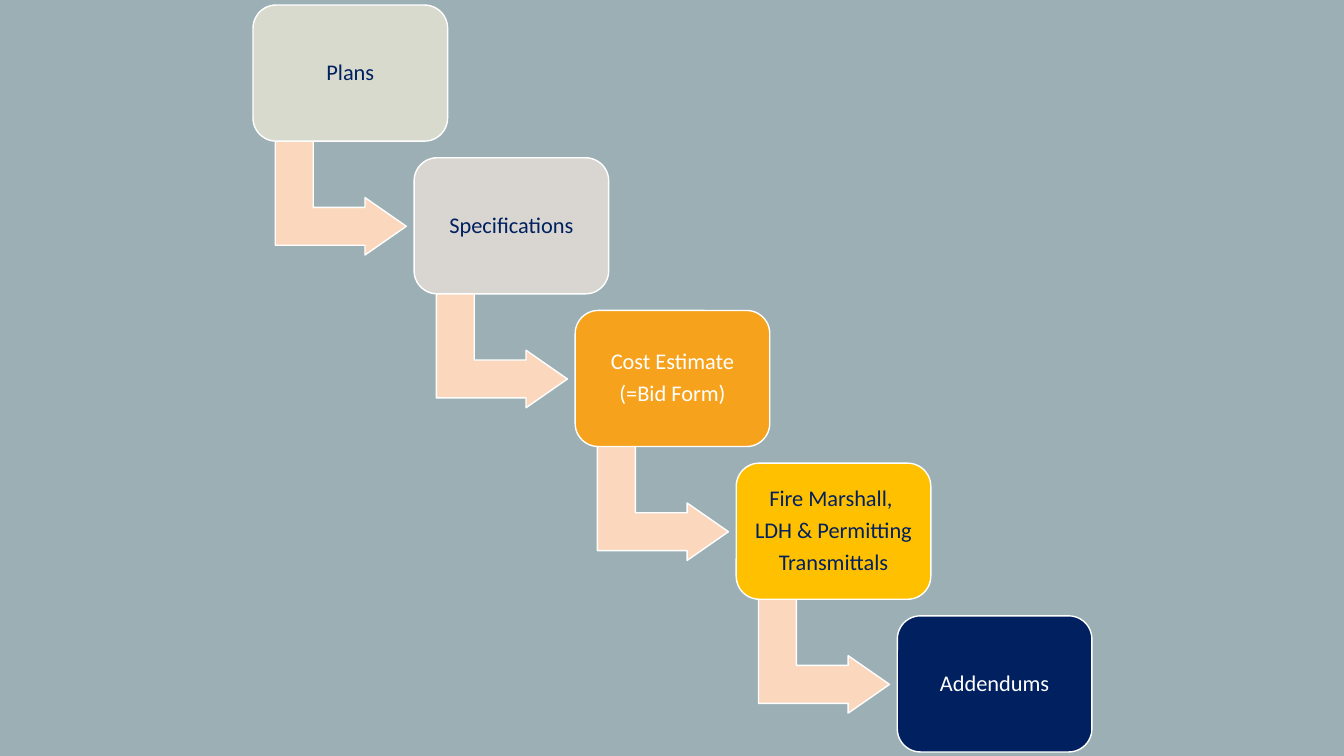
"""Build a staircase of project documents, each step leading to the next by a bent arrow."""
from pptx import Presentation
from pptx.dml.color import RGBColor
from pptx.enum.shapes import MSO_SHAPE
from pptx.enum.text import MSO_ANCHOR, PP_ALIGN
from pptx.util import Inches, Pt

ROUNDED_BOX = MSO_SHAPE.ROUNDED_RECTANGLE
BENT_ARROW = MSO_SHAPE.BENT_UP_ARROW
MIDDLE = MSO_ANCHOR.MIDDLE
CENTER = PP_ALIGN.CENTER

THEME = {
    "background": "9BAFB5",
    "arrow": "FBD7BD",
    "outline": "FFFFFF",
    "sage": "D7DACD",
    "stone": "D9D6D1",
    "orange": "F6A21D",
    "gold": "FFC000",
    "navy": "002060",
    "white": "FFFFFF",
    "font": "Calibri",
    "text_size": 16,
    "space_after": 5.6,
    "line_spacing": 0.9,
    "outline_width": 1,
}

STEPS = [
    (["Plans"], "sage", "navy"),
    (["Specifications"], "stone", "navy"),
    (["Cost Estimate", "(=Bid Form)"], "orange", "white"),
    (["Fire Marshall, ", "LDH & Permitting", "Transmittals"], "gold", "navy"),
    (["Addendums"], "navy", "white"),
]

FIRST_LEFT, FIRST_TOP = 2.51, 0.05
LAST_LEFT, LAST_TOP = 8.9, 6.11
BOX_WIDTH, BOX_HEIGHT = 1.93, 1.35
ARROW_WIDTH, ARROW_HEIGHT = 1.14, 1.3
ARROW_OFFSET_LEFT, ARROW_OFFSET_TOP = 0.3, 1.26
ARROW_ADJUSTMENTS = [0.33, 0.25, 0.36]
INSET = 0.07


def add_step_shape(slide, preset, left, top, width, height, fill, adjustments):
    shape = slide.shapes.add_shape(
        preset, Inches(left), Inches(top), Inches(width), Inches(height)
    )
    shape.shadow.inherit = False
    shape.fill.solid()
    shape.fill.fore_color.rgb = RGBColor.from_string(THEME[fill])
    shape.line.color.rgb = RGBColor.from_string(THEME["outline"])
    shape.line.width = Pt(THEME["outline_width"])
    for index, value in enumerate(adjustments):
        shape.adjustments[index] = value
    return shape


def write_text(shape, lines, color, size=THEME["text_size"], align=CENTER, anchor=MIDDLE):
    frame = shape.text_frame
    frame.word_wrap = True
    frame.vertical_anchor = anchor
    frame.margin_left = frame.margin_right = Inches(INSET)
    frame.margin_top = frame.margin_bottom = Inches(INSET)
    for index, line in enumerate(lines):
        paragraph = frame.add_paragraph() if index else frame.paragraphs[0]
        paragraph.alignment = align
        paragraph.line_spacing = THEME["line_spacing"]
        paragraph.space_after = Pt(THEME["space_after"])
        run = paragraph.add_run()
        run.text = line
        run.font.name = THEME["font"]
        run.font.size = Pt(size)
        run.font.color.rgb = RGBColor.from_string(THEME[color])


presentation = Presentation()
presentation.slide_width = Inches(13.33)
presentation.slide_height = Inches(7.5)
slide = presentation.slides.add_slide(presentation.slide_layouts[6])
slide.background.fill.solid()
slide.background.fill.fore_color.rgb = RGBColor.from_string(THEME["background"])

last_step = len(STEPS) - 1
step_right = (LAST_LEFT - FIRST_LEFT) / last_step
step_down = (LAST_TOP - FIRST_TOP) / last_step

for number, (lines, fill, text_color) in enumerate(STEPS):
    left = FIRST_LEFT + number * step_right
    top = FIRST_TOP + number * step_down
    if number < last_step:
        arrow = add_step_shape(
            slide, BENT_ARROW, left + ARROW_OFFSET_LEFT, top + ARROW_OFFSET_TOP,
            ARROW_WIDTH, ARROW_HEIGHT, "arrow", ARROW_ADJUSTMENTS,
        )
        arrow.rotation = 90
    box = add_step_shape(
        slide, ROUNDED_BOX, left, top, BOX_WIDTH, BOX_HEIGHT, fill, [0.17]
    )
    write_text(box, lines, color=text_color)

presentation.save("out.pptx")
